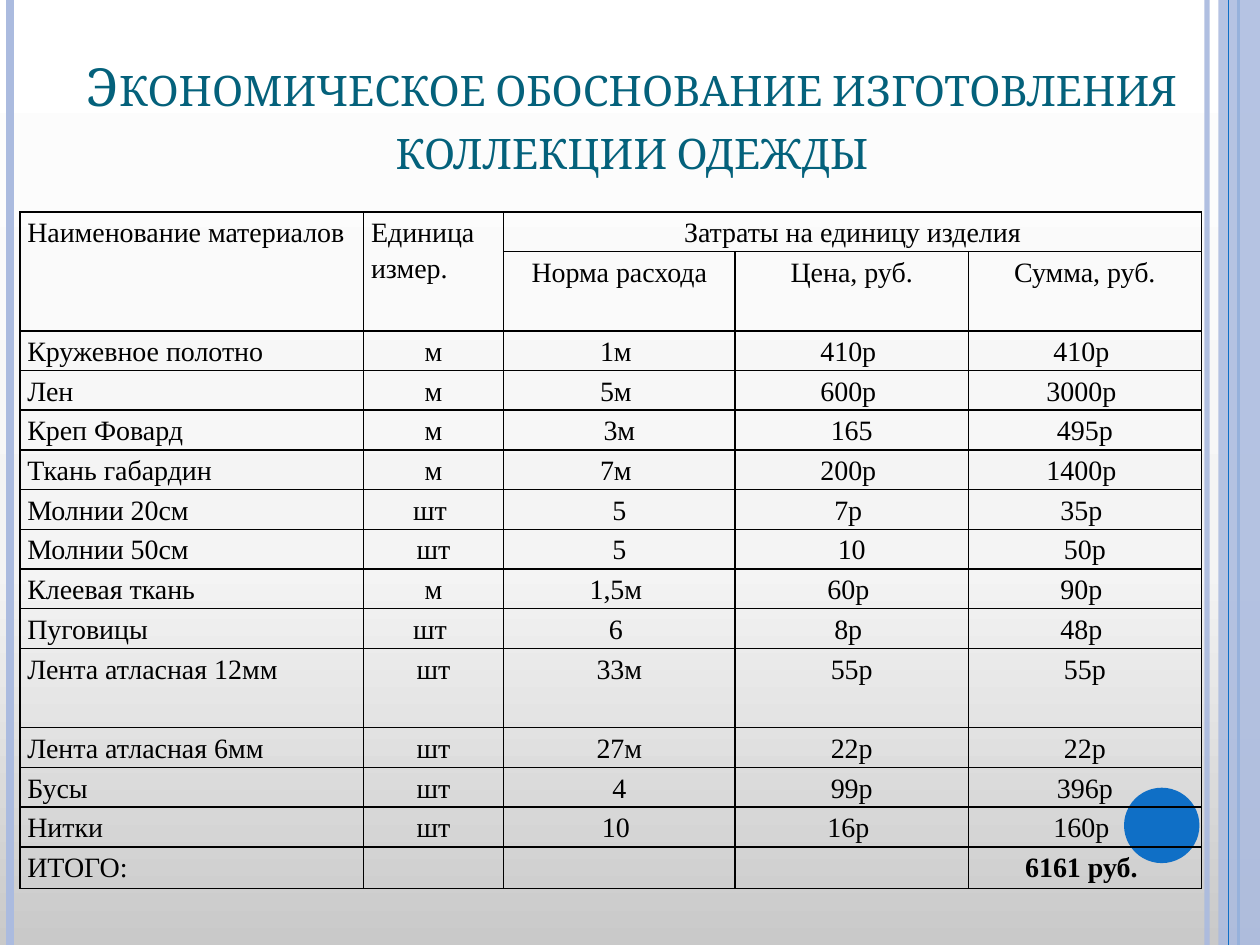
from dataclasses import dataclass
from copy import deepcopy
from lxml.etree import SubElement as Sub
from pptx import Presentation as Deck
from pptx.dml.color import RGBColor as Rgb
from pptx.enum.shapes import MSO_CONNECTOR as Link, MSO_SHAPE as Form
from pptx.enum.text import MSO_ANCHOR as Anchor, MSO_AUTO_SIZE as Auto, PP_ALIGN as Align
from pptx.oxml.ns import qn
from pptx.util import Cm, Pt


@dataclass(frozen=True)
class Theme:
    pale: str = "ABBBDF"
    blue: str = "0F6FC6"
    teal: str = "04617B"
    ink: str = "000000"
    back: tuple = ((0, "C9C9C9"), (40, "F4F4F4"), (100, "FFFFFF"))
    head: str = "Cambria"
    body: str = "Times New Roman"
    big: int = 30
    small: int = 16
    rule: int = 1


def put(item, form):
    for key, val in form.items():
        setattr(item, key, val)


def fade(fill, part):
    if part < 100:
        color = fill._xPr.find(qn("a:solidFill"))[0]
        Sub(color, qn("a:alpha"), val=str(part * 1000))


class Page:
    def __init__(self, deck, look):
        self.look = look
        self.slide = deck.slides.add_slide(deck.slide_layouts[5])
        self.wide, self.high = deck.slide_width, deck.slide_height

    def ground(self):
        fill = self.slide.background.fill
        fill.gradient()
        fill.gradient_angle = 90
        first = fill.gradient_stops[0]._gs
        first.addnext(deepcopy(first))
        for stop, (place, color) in zip(fill.gradient_stops, self.look.back):
            put(stop, {"position": place / 100})
            stop.color.rgb = Rgb.from_string(color)

    def stripe(self, x, color, width, part=100):
        line = self.slide.shapes.add_connector(Link.STRAIGHT, Cm(x), 0, Cm(x), self.high)
        line.line.width = Pt(width)
        line.line.fill.solid()
        line.line.color.rgb = Rgb.from_string(color)
        fade(line.line.fill, part)
        Sub(line._element.spPr, qn("a:effectLst"))

    def shape(self, form, box, color, part=100):
        shape = self.slide.shapes.add_shape(form, *map(Cm, box))
        shape.shadow.inherit = False
        shape.fill.solid()
        shape.fill.fore_color.rgb = Rgb.from_string(color)
        fade(shape.fill, part)
        shape.line.fill.background()

    def title(self, text, box):
        title = self.slide.shapes.title
        put(title, dict(zip(("left", "top", "width", "height"), map(Cm, box))))
        frame = title.text_frame
        put(frame, {"text": text, "vertical_anchor": Anchor.BOTTOM,
                    "word_wrap": True, "auto_size": Auto.NONE})
        para = frame.paragraphs[0]
        para.alignment = Align.CENTER
        font = para.runs[0].font
        put(font, {"name": self.look.head, "size": Pt(self.look.big)})
        font.color.rgb = Rgb.from_string(self.look.teal)
        font._element.set("cap", "small")

    def edge(self, cell):
        prop = cell._tc.get_or_add_tcPr()
        for side in ("lnL", "lnR", "lnT", "lnB"):
            line = Sub(prop, qn(f"a:{side}"), w=str(Pt(self.look.rule)))
            Sub(Sub(line, qn("a:solidFill")), qn("a:srgbClr"), val=self.look.ink)
        cell.fill.background()

    def cell(self, cell, text, align, bold):
        put(cell, {"margin_left": Cm(0.15), "margin_right": Cm(0.15),
                   "margin_top": Cm(0.02), "margin_bottom": 0})
        self.edge(cell)
        if text:
            cell.text = text
            para = cell.text_frame.paragraphs[0]
            put(para, {"alignment": align, "line_spacing": 1.15})
            font = para.runs[0].font
            put(font, {"name": self.look.body, "size": Pt(self.look.small), "bold": bold})
            font.color.rgb = Rgb.from_string(self.look.ink)

    def table(self, data, spot, cols, rows, spans):
        frame = self.slide.shapes.add_table(
            len(rows), len(cols), *map(Cm, (*spot, sum(cols), sum(rows))))
        table = frame.table
        put(table, {"first_row": False, "horz_banding": False})
        for col, width in zip(table.columns, cols):
            col.width = Cm(width)
        for row, height in zip(table.rows, rows):
            row.height = Cm(height)
        for start, end in spans:
            table.cell(*start).merge(table.cell(*end))
        for r, line in enumerate(data):
            for c, text in enumerate(line):
                left = c == 0 or (r, c) == (0, 1)
                bold = r == len(data) - 1 and c > 0
                self.cell(table.cell(r, c), text, Align.LEFT if left else Align.CENTER, bold)


COSTS = [
    ("Наименование материалов", "Единица измер.", "Затраты на единицу изделия", "", ""),
    ("", "", "Норма расхода", "Цена, руб.", "Сумма, руб."),
    ("Кружевное полотно", "м", "1м ", "410р ", "410р "),
    ("Лен", "м", "5м ", "600р ", "3000р "),
    ("Креп Фовард", "м", "3м", "165", "495р"),
    ("Ткань габардин", "м", "7м ", "200р ", "1400р "),
    ("Молнии 20см", "шт ", "5", "7р ", "35р "),
    ("Молнии 50см", "шт", "5", "10", "50р"),
    ("Клеевая ткань", "м", "1,5м ", "60р ", "90р "),
    ("Пуговицы", "шт ", "6 ", "8р ", "48р "),
    ("Лента атласная 12мм", "шт", "33м", "55р", "55р"),
    ("Лента атласная 6мм", "шт", "27м", "22р", "22р"),
    ("Бусы", "шт", "4", "99р", "396р"),
    ("Нитки", "шт", "10 ", "16р ", "160р "),
    ("ИТОГО:", "", "", "", "6161 руб. "),
]


def main():
    deck = Deck()
    put(deck, {"slide_width": Cm(25.4), "slide_height": Cm(19.05)})
    look = Theme()
    page = Page(deck, look)
    page.ground()
    page.stripe(24.33, look.pale, 3, 93)
    page.stripe(0.2, look.pale, 4.5)
    page.stripe(24.97, look.blue, 1.5)
    page.shape(Form.RECTANGLE, (24.56, 0, 0.84, 19.05), look.pale, 87)
    page.stripe(24.77, look.blue, 0.75)
    page.shape(Form.OVAL, (22.66, 15.88, 1.52, 1.52), look.blue)
    page.title("Экономическое обоснование изготовления коллекции одежды",
               (1.27, 0.76, 22.94, 3))
    rows = [1.6 if r in (1, 10) else 0.8 for r in range(len(COSTS) - 1)] + [0.84]
    spans = [((0, 0), (1, 0)), ((0, 1), (1, 1)), ((0, 2), (0, 4))]
    page.table(COSTS, (0.4, 4.27), (6.93, 2.82, 4.67, 4.7, 4.7), rows, spans)
    deck.save("out.pptx")


if __name__ == "__main__":
    main()
